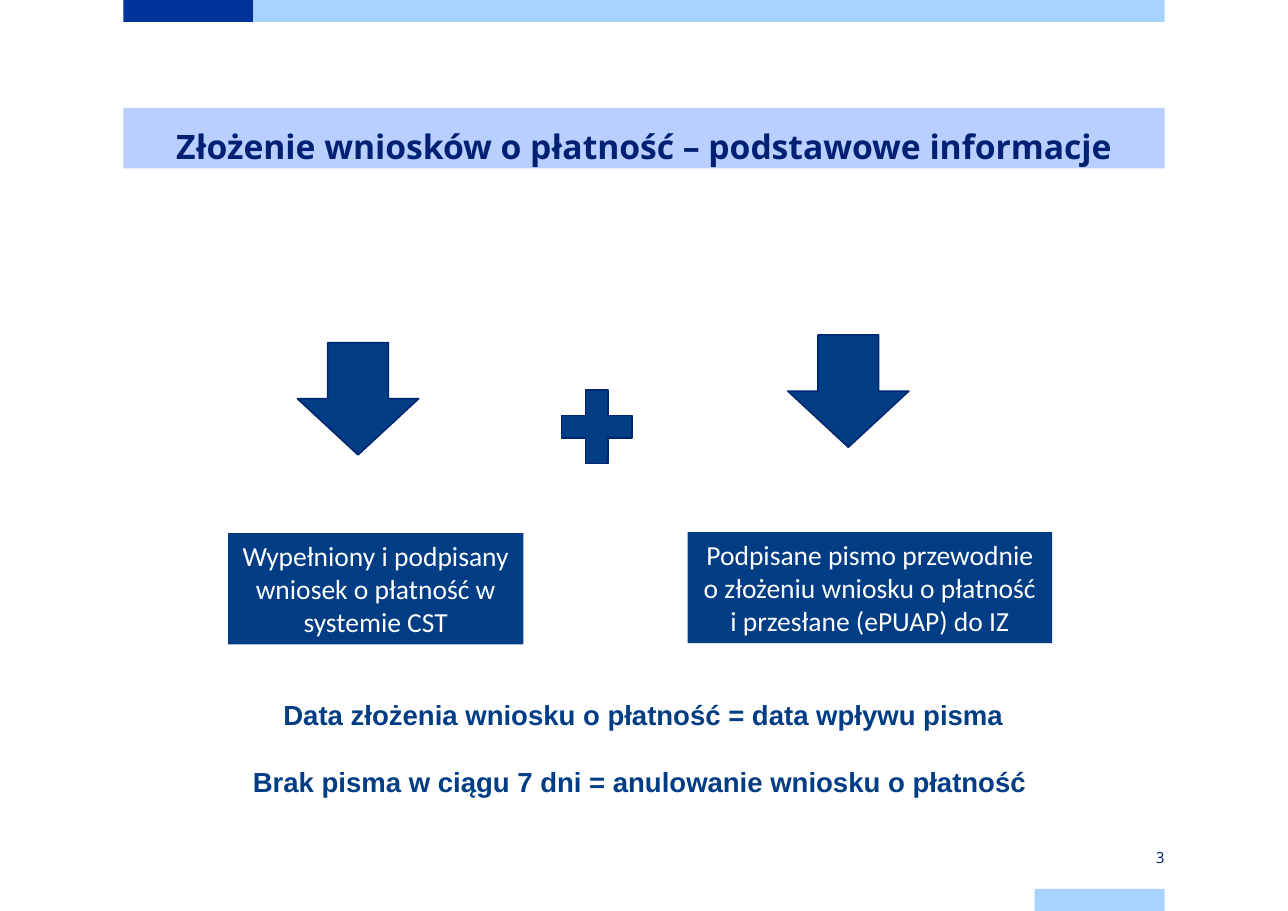
"""Builds the slide on filing payment claims."""
from dataclasses import dataclass

from pptx import Presentation
from pptx.dml.color import RGBColor
from pptx.enum import shapes, text
from pptx.util import Inches, Pt

TITLE = "Złożenie wniosków o płatność – podstawowe informacje"
PAGE = "3"
STEPS = [
    ("Wypełniony i podpisany wniosek o płatność w systemie CST",
     (2.7, 3.11), (2.07, 4.84, 2.68, 1.01)),
    ("Podpisane pismo przewodnie o złożeniu wniosku o płatność i przesłane (ePUAP) do IZ",
     (7.15, 3.04), (6.24, 4.83, 3.31, 1.01)),
]
NOTES = [
    "Data złożenia wniosku o płatność = data wpływu pisma",
    "Brak pisma w ciągu 7 dni = anulowanie wniosku o płatność ",
]
LEFT, WIDE, UNIT, THIN = 1.12, 9.45, 1.18, 0.2
HIGH = 8.27
ARROW = (1.1, 1.02)
PLUS = (4.98, 3.42, 0.87, 0.91)


@dataclass
class Theme:
    """Colours, fonts and type sizes."""
    royal: str = "003399"
    sky: str = "A6D3FF"
    band: str = "B8CFFF"
    navy: str = "002073"
    blue: str = "003D84"
    edge: str = "002671"
    white: str = "FFFFFF"
    head: str = "Open Sans"
    box: str = "Calibri"
    note: str = "Arial"
    big: int = 22
    body: int = 18
    small: int = 10


T = Theme()
KIND = shapes.MSO_SHAPE
ALIGN = text.PP_ALIGN
MID = text.MSO_ANCHOR.MIDDLE


def paint(item, hue):
    """Fill an item with a solid colour."""
    item.fill.solid()
    item.fill.fore_color.rgb = RGBColor.from_string(hue)


def shape(slide, kind, area, hue, edge=None):
    """Add a flat preset shape."""
    item = slide.shapes.add_shape(kind, *map(Inches, area))
    item.shadow.inherit = False
    paint(item, hue)
    if edge:
        item.line.color.rgb = RGBColor.from_string(edge)
        item.line.width = Pt(1)
    else:
        item.line.fill.background()
    return item


def write(para, words, font, size, hue, bold=False, align=ALIGN.CENTER):
    """Add one styled run to a paragraph."""
    para.alignment = align
    run = para.add_run()
    run.text = words
    run.font.name = font
    run.font.size = Pt(size)
    run.font.bold = bold
    run.font.color.rgb = RGBColor.from_string(hue)


def frame(item, anchor, side=0.1, top=0.05):
    """Set wrap, anchor and insets of a text frame."""
    body = item.text_frame
    body.word_wrap = True
    body.auto_size = text.MSO_AUTO_SIZE.NONE
    body.vertical_anchor = anchor
    body.margin_left = body.margin_right = Inches(side)
    body.margin_top = body.margin_bottom = Inches(top)
    return body


def head(slide):
    """Format the title placeholder."""
    item = slide.shapes.title
    item.left, item.top, item.width, item.height = map(
        Inches, (LEFT, 0.98, WIDE, 0.55))
    paint(item, T.band)
    para = frame(item, MID, 0, 0).paragraphs[0]
    para.line_spacing = Pt(36)
    write(para, TITLE, T.head, T.big, T.navy, True)


def main():
    """Build and save the slide."""
    deck = Presentation()
    deck.slide_width, deck.slide_height = Inches(11.69), Inches(HIGH)
    slide = deck.slides.add_slide(deck.slide_layouts[5])
    last = LEFT + WIDE - UNIT
    bars = [
        ((LEFT, 0, UNIT, THIN), T.royal),
        ((LEFT + UNIT, 0, WIDE - UNIT, THIN), T.sky),
        ((last, HIGH - THIN, UNIT, THIN), T.sky),
    ]
    for area, hue in bars:
        shape(slide, KIND.RECTANGLE, area, hue)
    head(slide)

    for words, spot, area in STEPS:
        shape(slide, KIND.DOWN_ARROW, spot + ARROW, T.blue, T.edge)
        box = shape(slide, KIND.RECTANGLE, area, T.blue)
        para = frame(box, text.MSO_ANCHOR.TOP).paragraphs[0]
        write(para, words, T.box, T.body, T.white)
    shape(slide, KIND.MATH_PLUS, PLUS, T.blue, T.edge)

    note = slide.shapes.add_textbox(*map(Inches, (1.6, 6.29, 8.48, 1.01)))
    body = frame(note, text.MSO_ANCHOR.TOP)
    for i, words in enumerate(NOTES):
        para = body.add_paragraph() if i else body.paragraphs[0]
        para.space_before = Pt(22 if i else 0)
        write(para, words, T.note, T.body, T.blue, True)

    page = slide.shapes.add_textbox(*map(Inches, (last, 7.68, UNIT, THIN)))
    para = frame(page, MID, 0, 0).paragraphs[0]
    write(para, PAGE, T.head, T.small, T.navy, align=ALIGN.RIGHT)
    deck.save("out.pptx")


if __name__ == "__main__":
    main()
